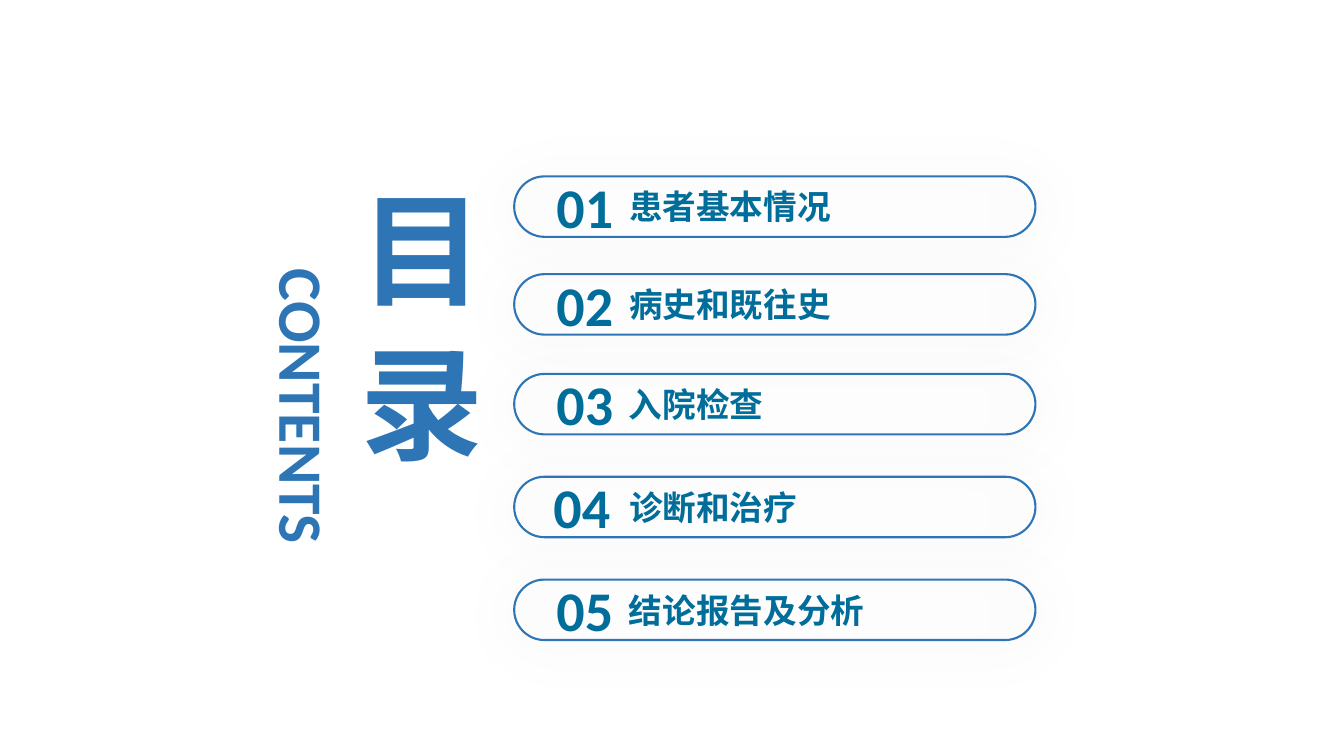
from lxml import etree
from pptx import Presentation
from pptx.dml.color import RGBColor
from pptx.enum.shapes import MSO_SHAPE
from pptx.enum.text import MSO_AUTO_SIZE, PP_ALIGN
from pptx.oxml import parse_xml
from pptx.oxml.ns import nsdecls, qn
from pptx.util import Inches, Pt

ROUNDED = MSO_SHAPE.ROUNDED_RECTANGLE
GROW = MSO_AUTO_SIZE.SHAPE_TO_FIT_TEXT
LEFT, RIGHT = PP_ALIGN.LEFT, PP_ALIGN.RIGHT

BLUE = RGBColor(0x2E, 0x75, 0xB6)
TEAL = RGBColor(0x00, 0x6E, 0x9C)
FONT = "Calibri"
LABEL_SIZE = 24
INSETS = 0.21  # left and right text margins plus a little slack

# Number, label, top of the pill, sideways shift of the number
CHAPTERS = [
    ("01", "患者基本情况", 1.75, 0),
    ("02", "病史和既往史", 2.72, 0),
    ("03", "入院检查", 3.71, 0),
    ("04", "诊断和治疗", 4.73, -0.03),
    ("05", "结论报告及分析", 5.75, 0),
]


def add_text(slide, box, text, size, color, align=LEFT, vertical=False):
    textbox = slide.shapes.add_textbox(*map(Inches, box))
    frame = textbox.text_frame
    frame.text = text
    frame.word_wrap = not vertical
    frame.auto_size = GROW
    if vertical:
        frame._txBody.find(qn("a:bodyPr")).set("vert", "eaVert")
    paragraph = frame.paragraphs[0]
    paragraph.alignment = align
    font = paragraph.runs[0].font
    font.name, font.size, font.bold = FONT, Pt(size), True
    font.color.rgb = color


def add_soft_shadow(shape):
    shape.shadow.inherit = False
    effects = shape._element.spPr.find(qn("a:effectLst"))
    shadow = parse_xml(
        f'<a:outerShdw {nsdecls("a")} blurRad="{Pt(34)}" dist="{Pt(3)}" '
        'dir="5400000" algn="t" rotWithShape="0"/>')
    color = etree.SubElement(shadow, qn("a:srgbClr"), val="000000")
    etree.SubElement(color, qn("a:alpha"), val="25000")
    effects.append(shadow)


def add_heading(slide, left, top):
    """Vertical title with its English counterpart."""
    add_text(slide, (left, top + 0.8, 0.94, 2.85), "CONTENTS", 44, BLUE,
             vertical=True)
    add_text(slide, (left + 0.76, top, 1.68, 2.85), "目 录", 88, BLUE,
             vertical=True)


def add_chapter(slide, box, number, label, number_shift):
    """Outlined pill holding a number and a label."""
    left, top, width, height = box
    label_width = len(label) * LABEL_SIZE / 72 + INSETS
    add_text(slide, (left + 1.04, top + 0.05, label_width, 0.5), label,
             LABEL_SIZE, TEAL)
    add_text(slide, (left + 0.31 + number_shift, top - 0.09, 0.77, 0.77),
             number, 40, TEAL, RIGHT)
    pill = slide.shapes.add_shape(ROUNDED, *map(Inches, box))
    pill.adjustments[0] = 0.5
    pill.fill.background()
    pill.line.color.rgb = BLUE
    pill.line.width = Pt(1.5)
    add_soft_shadow(pill)


def main():
    deck = Presentation()
    deck.slide_width, deck.slide_height = Inches(13.33), Inches(7.5)
    slide = deck.slides.add_slide(deck.slide_layouts[6])
    add_heading(slide, 2.49, 1.77)
    for number, label, top, shift in CHAPTERS:
        add_chapter(slide, (5.1, top, 5.17, 0.6), number, label, shift)
    deck.save("out.pptx")


if __name__ == "__main__":
    main()
